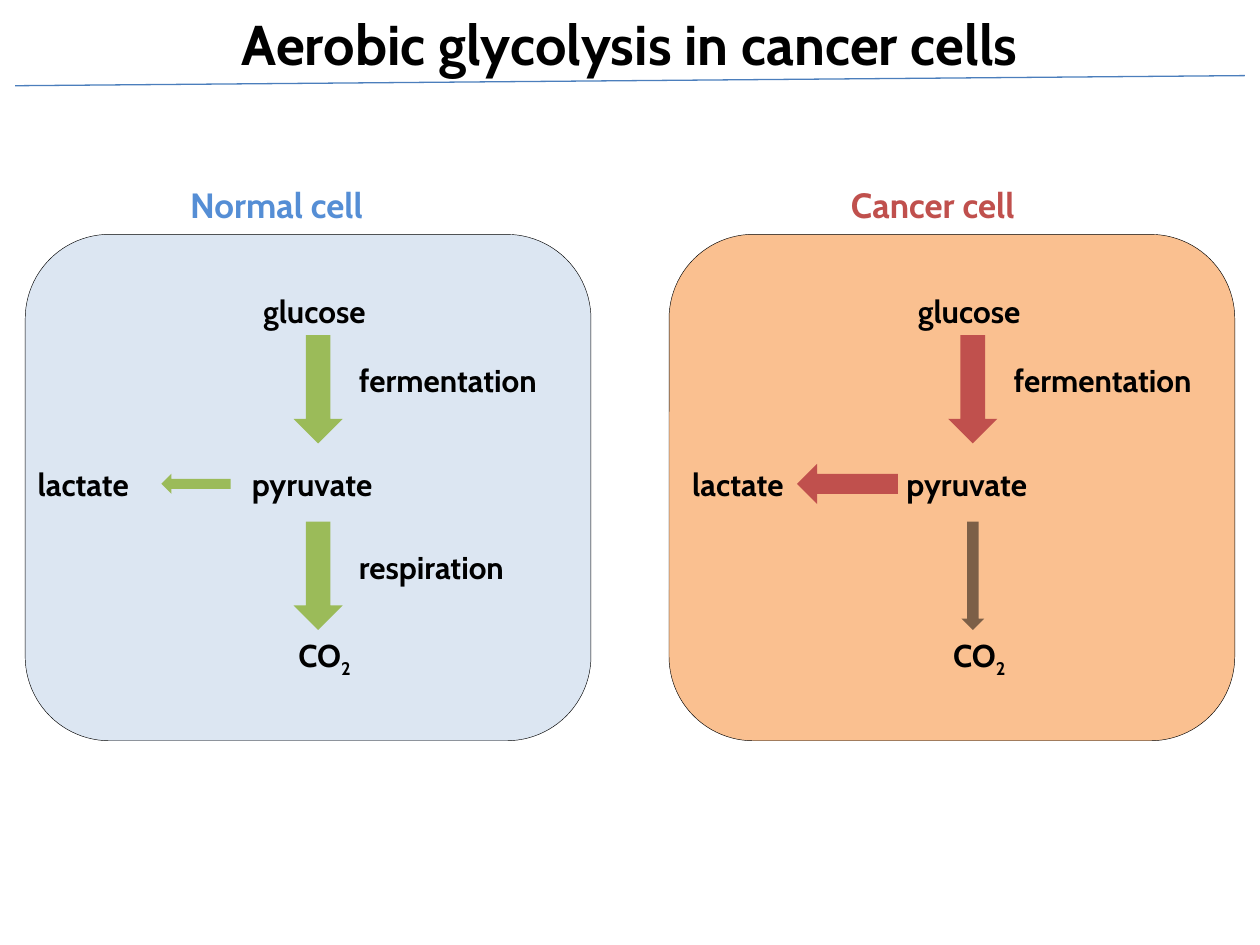
from dataclasses import dataclass

from lxml.etree import SubElement
from pptx import Presentation
from pptx.dml.color import RGBColor
from pptx.enum.shapes import MSO_CONNECTOR, MSO_SHAPE
from pptx.enum.text import MSO_ANCHOR, PP_ALIGN
from pptx.oxml.ns import qn
from pptx.util import Pt


@dataclass(frozen=True)
class Theme:
    """Colours, font and type sizes of the slide."""
    font: str = "Cabin"
    title: int = 32
    heading: int = 20
    label: int = 18
    ink: str = "000000"
    rule: str = "4B7EBC"
    blue: str = "558ED5"
    pale_blue: str = "DCE6F2"
    orange: str = "FAC090"
    red: str = "C0504D"
    green: str = "9BBB59"


THEME = Theme()
CELL_W, CELL_H = 323.3, 289.4
ARROW_H = 61.9


def add_run(p, text, size, color, baseline=None):
    """Append one bold run to a paragraph."""
    r = p.add_run()
    r.text = text
    r.font.name, r.font.size, r.font.bold = THEME.font, Pt(size), True
    r.font.color.rgb = RGBColor.from_string(color)
    if baseline:
        r.font._element.set("baseline", str(baseline))


def add_label(s, x, y, w, text, size=THEME.label, color=THEME.ink, sub=None):
    """Add an unwrapped label with its top left corner at x, y."""
    sp = s.shapes.add_textbox(Pt(x), Pt(y), Pt(w), Pt(size * 1.6))
    tf = sp.text_frame
    tf.word_wrap = False
    p = tf.paragraphs[0]
    add_run(p, text, size, color)
    if sub:
        add_run(p, sub, size, color, -25000)


def add_block(s, kind, x, y, w, h, fill, line=None, alpha=None):
    """Add a filled shape, with an optional thin outline and opacity."""
    sp = s.shapes.add_shape(kind, Pt(x), Pt(y), Pt(w), Pt(h))
    sp.shadow.inherit = False
    sp.fill.solid()
    sp.fill.fore_color.rgb = RGBColor.from_string(fill)
    if alpha:
        clr = sp.fill._xPr.find(".//" + qn("a:srgbClr"))
        SubElement(clr, qn("a:alpha"), val=str(alpha * 1000))
    if line:
        sp.line.color.rgb = RGBColor.from_string(line)
        sp.line.width = Pt(0.25)
    else:
        sp.line.fill.background()


def add_title(s, x, y, w, h, text):
    """Place the centred title and the slanted rule below it."""
    sp = s.shapes.add_textbox(Pt(x), Pt(y), Pt(w), Pt(h))
    tf = sp.text_frame
    tf.word_wrap = True
    tf.vertical_anchor = MSO_ANCHOR.MIDDLE
    p = tf.paragraphs[0]
    p.alignment = PP_ALIGN.CENTER
    add_run(p, text, THEME.title, THEME.ink)
    rule = s.shapes.add_connector(MSO_CONNECTOR.STRAIGHT, Pt(x + 8.6), Pt(y + h),
                                  Pt(x + w - 8.6), Pt(y + h - 5.8))
    rule.line.color.rgb = RGBColor.from_string(THEME.rule)
    rule.line.width = Pt(0.75)
    SubElement(rule._element.spPr, qn("a:effectLst"))


def add_pathway(s, x, y, color, side, lower, respiration):
    """Place the glucose pathway; side is the lactate arrow's offset and size."""
    axis = x + 167.4
    for text, dy, w in (("glucose", 29.5, 77), ("pyruvate", 128.2, 90)):
        add_label(s, axis - w / 2, y + dy, w, text)
    add_label(s, axis - 18.4, y + 226.1, 44.6, "CO", sub="2")
    add_label(s, x, y + 128.2, 72, "lactate")
    add_label(s, x + 183.6, y + 69.1, 121.7, "fermentation")
    if respiration:
        add_label(s, x + 183.6, y + 175.7, 103.7, "respiration")
    upper = (28.1, color, None)
    for dy, (w, fill, alpha) in ((57.6, upper), (164.2, lower or upper)):
        add_block(s, MSO_SHAPE.DOWN_ARROW, axis - w / 2, y + dy, w, ARROW_H, fill, alpha=alpha)
    dx, w, h = side
    add_block(s, MSO_SHAPE.LEFT_ARROW, x + dx, y + 142.6 - h / 2, w, h, color)


def add_cell(s, x, y, name, name_w, name_color, fill, inset, arrow, side,
             lower=None, respiration=False):
    """Place a named cell with its pathway inset from the left edge."""
    add_block(s, MSO_SHAPE.ROUNDED_RECTANGLE, x, y, CELL_W, CELL_H, fill, THEME.ink)
    add_label(s, x + inset + 149 - name_w / 2, y - 32.4, name_w, name,
              THEME.heading, name_color)
    add_pathway(s, x + inset, y, arrow, side, lower, respiration)


def main():
    """Build the slide and save it."""
    prs = Presentation()
    prs.slide_width, prs.slide_height = Pt(720), Pt(540)
    s = prs.slides.add_slide(prs.slide_layouts[6])
    add_title(s, 0, 0, 720, 49, "Aerobic glycolysis in cancer cells")
    add_cell(s, 14.4, 133.9, "Normal cell", 123.8, THEME.blue, THEME.pale_blue, 0,
             THEME.green, (77.8, 39.6, 11.5), respiration=True)
    add_cell(s, 382.3, 133.9, "Cancer cell", 116.6, THEME.red, THEME.orange, 6.2,
             THEME.red, (67, 57.6, 23), lower=(13, THEME.ink, 50))
    prs.save("out.pptx")


if __name__ == "__main__":
    main()
